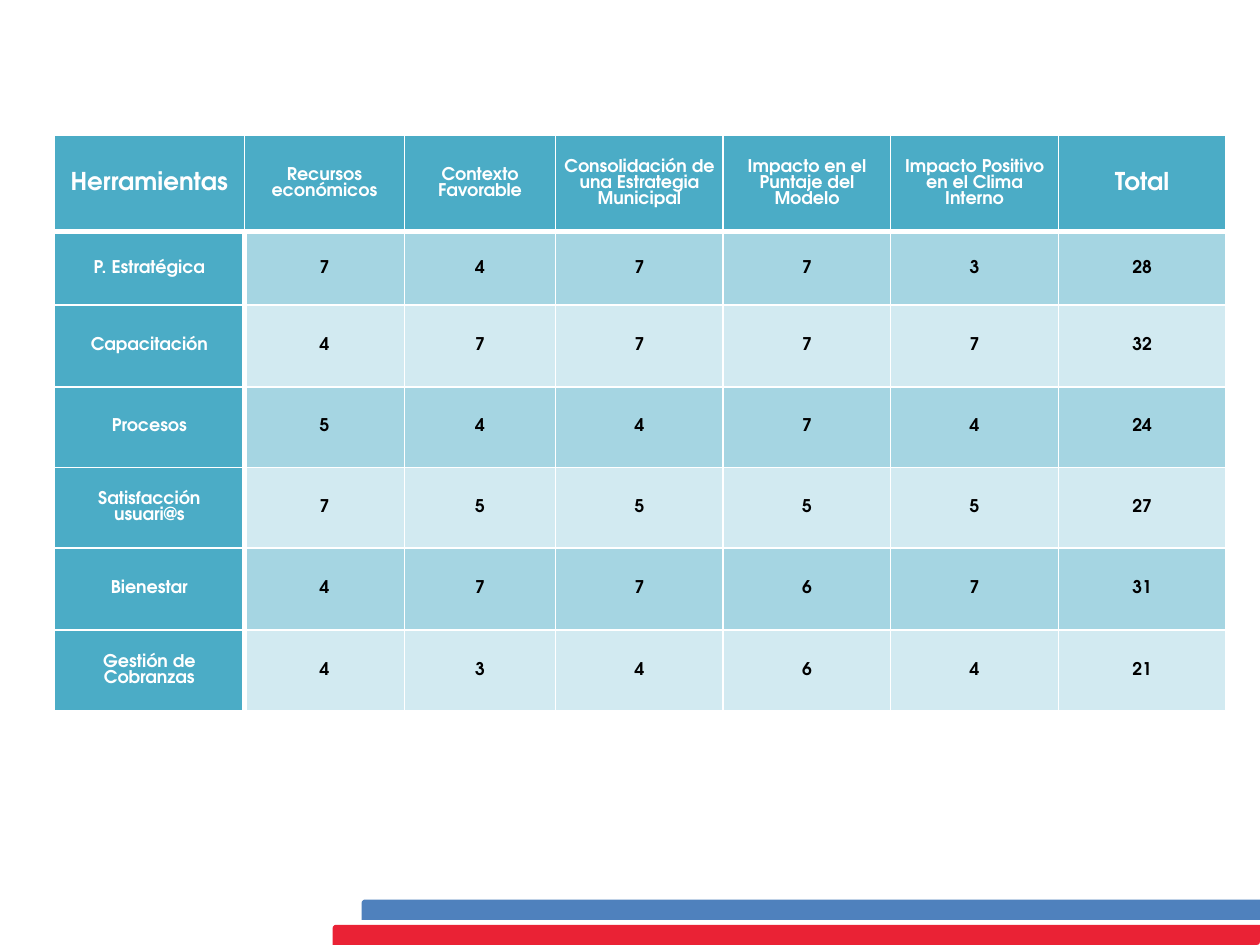
from pptx import Presentation
from pptx.dml.color import RGBColor
from pptx.enum.shapes import MSO_SHAPE as SHAPE
from pptx.enum.text import MSO_ANCHOR as ANCHOR, PP_ALIGN as ALIGN
from pptx.oxml import parse_xml
from pptx.oxml.ns import nsdecls
from pptx.util import Inches, Pt

WHITE = RGBColor(0xFF, 0xFF, 0xFF)
BLACK = RGBColor(0, 0, 0)
BLUE = RGBColor(0x4F, 0x81, 0xBD)
RED = RGBColor(0xEA, 0x22, 0x35)
TEAL = RGBColor(0x4B, 0xAC, 0xC6)
BANDS = (RGBColor(0xD2, 0xEA, 0xF1), RGBColor(0xA5, 0xD5, 0xE2))

COLS = (1.51, 1.27, 1.2, 1.33, 1.33, 1.33, 1.33)
ROWS = (0.77, 0.58, 0.65, 0.64, 0.64, 0.65, 0.64)
SCORES = (
    ("Herramientas", "Recursos económicos", "Contexto Favorable",
     "Consolidación de una Estrategia Municipal",
     "Impacto en el Puntaje del Modelo",
     "Impacto Positivo en el Clima Interno", "Total"),
    ("P. Estratégica", 7, 4, 7, 7, 3, 28),
    ("Capacitación", 4, 7, 7, 7, 7, 32),
    ("Procesos", 5, 4, 4, 7, 4, 24),
    ("Satisfacción usuari@s", 7, 5, 5, 5, 5, 27),
    ("Bienestar", 4, 7, 7, 6, 7, 31),
    ("Gestión de Cobranzas", 4, 3, 4, 6, 4, 21),
)


class Deck:
    """Holds the text style and the current slide, and draws its elements."""

    font = "TeX Gyre Adventor"
    cell_format = {
        "vertical_anchor": ANCHOR.MIDDLE,
        "margin_left": Inches(0.07), "margin_right": Inches(0.07),
        "margin_top": 0, "margin_bottom": 0,
    }

    def __init__(self, s):
        self.s = s

    def bar(self, x, y, w, h, color):
        sp = self.s.shapes.add_shape(SHAPE.ROUND_2_DIAG_RECTANGLE, Inches(x),
                                     Inches(y), Inches(w), Inches(h))
        sp.shadow.inherit = False
        sp.fill.solid()
        sp.fill.fore_color.rgb = color
        sp.line.fill.background()

    def borders(self, cell, widths):
        tc_pr = cell._tc.get_or_add_tcPr()
        for side, width in zip("LRTB", widths):
            tc_pr.append(parse_xml(
                f'<a:ln{side} {nsdecls("a")} w="{Pt(width)}"><a:solidFill>'
                f'<a:srgbClr val="{WHITE}"/></a:solidFill></a:ln{side}>'))

    def cell(self, cell, text, fill, color, size, widths):
        for name, value in self.cell_format.items():
            setattr(cell, name, value)
        self.borders(cell, widths)
        cell.fill.solid()
        cell.fill.fore_color.rgb = fill
        p = cell.text_frame.paragraphs[0]
        p.alignment = ALIGN.CENTER
        r = p.add_run()
        r.text = str(text)
        for name, value in {"name": self.font, "size": Pt(size), "bold": True}.items():
            setattr(r.font, name, value)
        r.font.color.rgb = color

    def table(self, x, y, cols, rows, data):
        tbl = self.s.shapes.add_table(len(rows), len(cols), Inches(x), Inches(y),
                                      Inches(sum(cols)), Inches(sum(rows))).table
        for col, width in zip(tbl.columns, cols):
            col.width = Inches(width)
        for row, height in zip(tbl.rows, rows):
            row.height = Inches(height)
        for i, values in enumerate(data):
            for j, text in enumerate(values):
                heading = i == 0 or j == 0
                size = 14 if i == 0 and j in (0, len(cols) - 1) else 10
                widths = (3 if i and j == 1 else 1, 3 if i and j == 0 else 1,
                          3 if i == 1 else 1, 3 if i == 0 else 1)
                self.cell(tbl.cell(i, j), text, TEAL if heading else BANDS[i % 2],
                          WHITE if heading else BLACK, size, widths)


def main():
    prs = Presentation()
    prs.slide_width, prs.slide_height = Inches(10), Inches(7.5)
    deck = Deck(prs.slides.add_slide(prs.slide_layouts[6]))
    deck.bar(2.87, 7.14, 7.36, 0.16, BLUE)
    deck.bar(2.64, 7.34, 7.36, 0.16, RED)
    deck.table(0.43, 1.07, COLS, ROWS, SCORES)
    prs.save("out.pptx")


if __name__ == "__main__":
    main()
